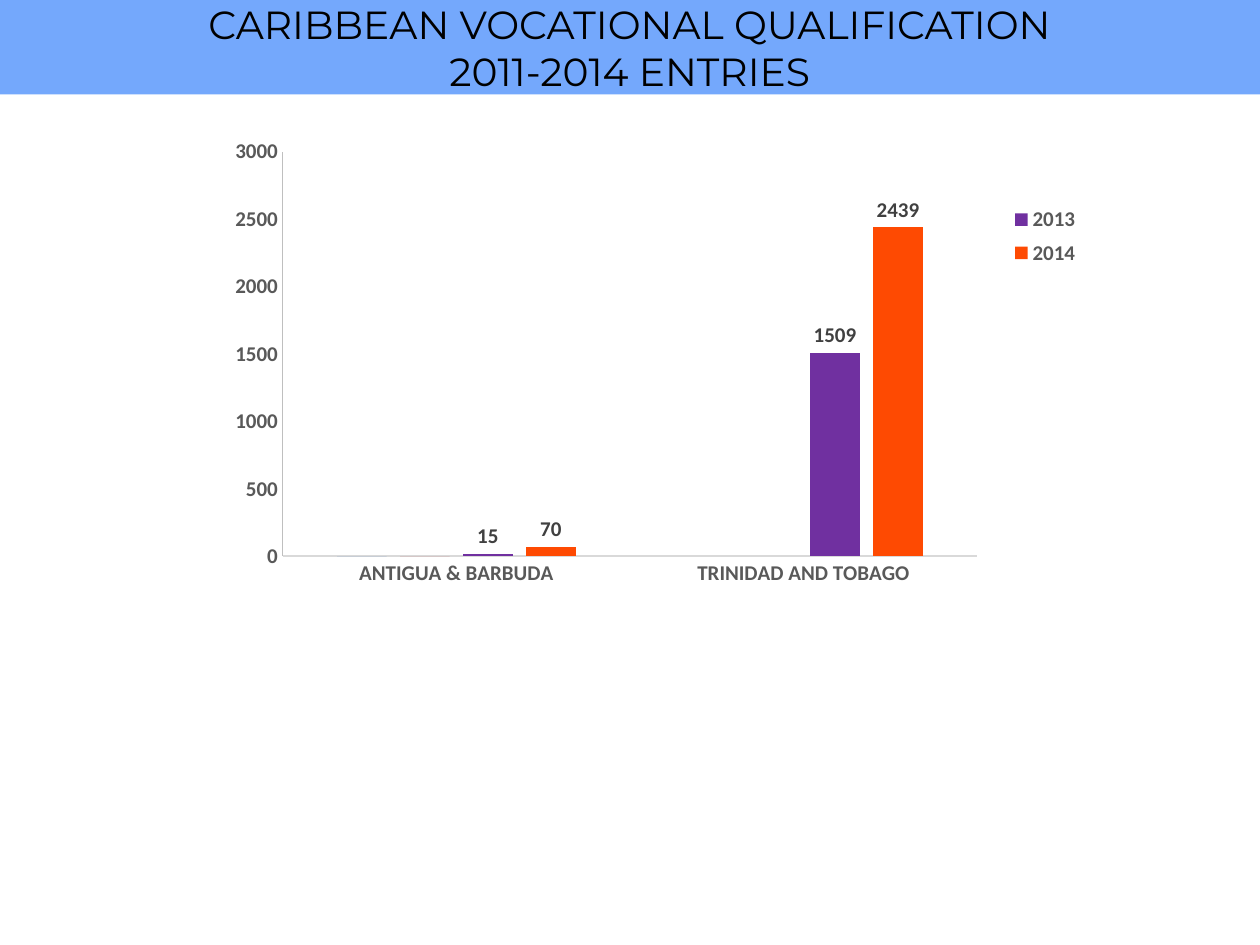
from pptx import Presentation
from pptx import util as u
from pptx.chart.data import CategoryChartData
from pptx.dml.color import RGBColor
from pptx.enum import chart as ch, text
from pptx.oxml import parse_xml
from pptx.oxml.ns import nsdecls, qn

BANNER_BLUE = RGBColor(0x74, 0xA8, 0xFC)
BLACK = RGBColor(0, 0, 0)
BLUE = RGBColor(0x4F, 0x81, 0xBD)
RED = RGBColor(0xC0, 0x50, 0x4D)
PURPLE = RGBColor(0x70, 0x30, 0xA0)
ORANGE = RGBColor(0xFE, 0x4A, 0x02)
AXIS_GREY = RGBColor(0x59, 0x59, 0x59)
LABEL_GREY = RGBColor(0x40, 0x40, 0x40)
CATEGORY_LINE = RGBColor(0xD9, 0xD9, 0xD9)
VALUE_LINE = RGBColor(0xBF, 0xBF, 0xBF)

COUNTRIES = ["ANTIGUA & BARBUDA", "TRINIDAD AND TOBAGO"]
ENTRIES = [
    ("Series 1", (0, None), BLUE),
    ("Series 2", (0, None), RED),
    ("2013", (15, 1509), PURPLE),
    ("2014", (70, 2439), ORANGE),
]
HIDDEN_ENTRIES = 2


def apply(target, **values):
    for name, value in values.items():
        setattr(target, name, value)


def manual_layout(x, y, w, h, inner=False):
    target = '<c:layoutTarget val="inner"/>' if inner else ""
    sizes = "".join(f'<c:{tag} val="{value}"/>' for tag, value in
                    [("xMode", "edge"), ("yMode", "edge"),
                     ("x", x), ("y", y), ("w", w), ("h", h)])
    return parse_xml(f'<c:layout {nsdecls("c")}><c:manualLayout>{target}{sizes}'
                     '</c:manualLayout></c:layout>')


class EntriesSlide:
    chart_font = {"name": "Calibri", "size": u.Pt(12), "bold": True}
    title_font = {"name": "Montserrat", "size": u.Pt(22.4), "bold": False}

    def __init__(self, deck):
        self.slide = deck.slides.add_slide(deck.slide_layouts[5])

    def style_font(self, font, values, color):
        apply(font, **values)
        font.color.rgb = color

    def title(self, lines, left, top, width, height):
        banner = self.slide.shapes.title
        apply(banner, left=u.Inches(left), top=u.Inches(top),
              width=u.Inches(width), height=u.Inches(height))
        banner.fill.solid()
        banner.fill.fore_color.rgb = BANNER_BLUE
        frame = banner.text_frame
        frame.text = "\n".join(lines)
        apply(frame, word_wrap=True, auto_size=text.MSO_AUTO_SIZE.NONE,
              vertical_anchor=text.MSO_ANCHOR.MIDDLE)
        for paragraph in frame.paragraphs:
            paragraph.alignment = text.PP_ALIGN.CENTER
            self.style_font(paragraph.runs[0].font, self.title_font, BLACK)

    def column_chart(self, left, top, width, height):
        data = CategoryChartData()
        data.categories = COUNTRIES
        for name, values, _ in ENTRIES:
            data.add_series(name, values)
        chart = self.slide.shapes.add_chart(
            ch.XL_CHART_TYPE.COLUMN_CLUSTERED, u.Inches(left), u.Inches(top),
            u.Inches(width), u.Inches(height), data).chart
        chart.has_title = False
        self.style_font(chart.font, {"name": "Calibri", "size": u.Pt(10)}, BLACK)
        plot = chart.plots[0]
        apply(plot, gap_width=219, overlap=-27, vary_by_categories=False)
        for series, (_, _, color) in zip(plot.series, ENTRIES):
            series.format.fill.solid()
            series.format.fill.fore_color.rgb = color
        for series in list(plot.series)[HIDDEN_ENTRIES:]:
            labels = series.data_labels
            apply(labels, show_value=True,
                  position=ch.XL_LABEL_POSITION.OUTSIDE_END)
            self.style_font(labels.font, self.chart_font, LABEL_GREY)
        self.axis(chart.category_axis, CATEGORY_LINE)
        self.axis(chart.value_axis, VALUE_LINE)
        apply(chart.value_axis, minimum_scale=0, maximum_scale=3000, major_unit=500)
        area = chart.plots[0]._element.getparent()
        for old in area.findall(qn("c:layout")):
            area.remove(old)
        area.insert(0, manual_layout(0.153, 0.058, 0.694, 0.704, inner=True))
        self.legend(chart)

    def axis(self, axis, line_color):
        apply(axis, has_major_gridlines=False,
              major_tick_mark=ch.XL_TICK_MARK.NONE,
              minor_tick_mark=ch.XL_TICK_MARK.NONE)
        self.style_font(axis.tick_labels.font, self.chart_font, AXIS_GREY)
        axis.format.line.color.rgb = line_color
        axis.format.line.width = u.Pt(0.75)

    def legend(self, chart):
        chart.has_legend = True
        legend = chart.legend
        apply(legend, position=ch.XL_LEGEND_POSITION.RIGHT, include_in_layout=False)
        self.style_font(legend.font, self.chart_font, AXIS_GREY)
        root = legend._element
        for old in root.findall(qn("c:layout")):
            root.remove(old)
        parts = [parse_xml(f'<c:legendEntry {nsdecls("c")}><c:idx val="{index}"/>'
                           '<c:delete val="1"/></c:legendEntry>')
                 for index in range(HIDDEN_ENTRIES)]
        parts.append(manual_layout(0.87, 0.14, 0.09, 0.13))
        for place, part in enumerate(parts, 1):
            root.insert(place, part)


def main():
    deck = Presentation()
    apply(deck, slide_width=u.Inches(10), slide_height=u.Inches(7.5))
    page = EntriesSlide(deck)
    page.title(["CARIBBEAN VOCATIONAL QUALIFICATION", "2011-2014 ENTRIES"],
               0, 0, 10, 0.75)
    page.column_chart(1.03, 0.94, 7.94, 4.56)
    deck.save("out.pptx")


if __name__ == "__main__":
    main()
